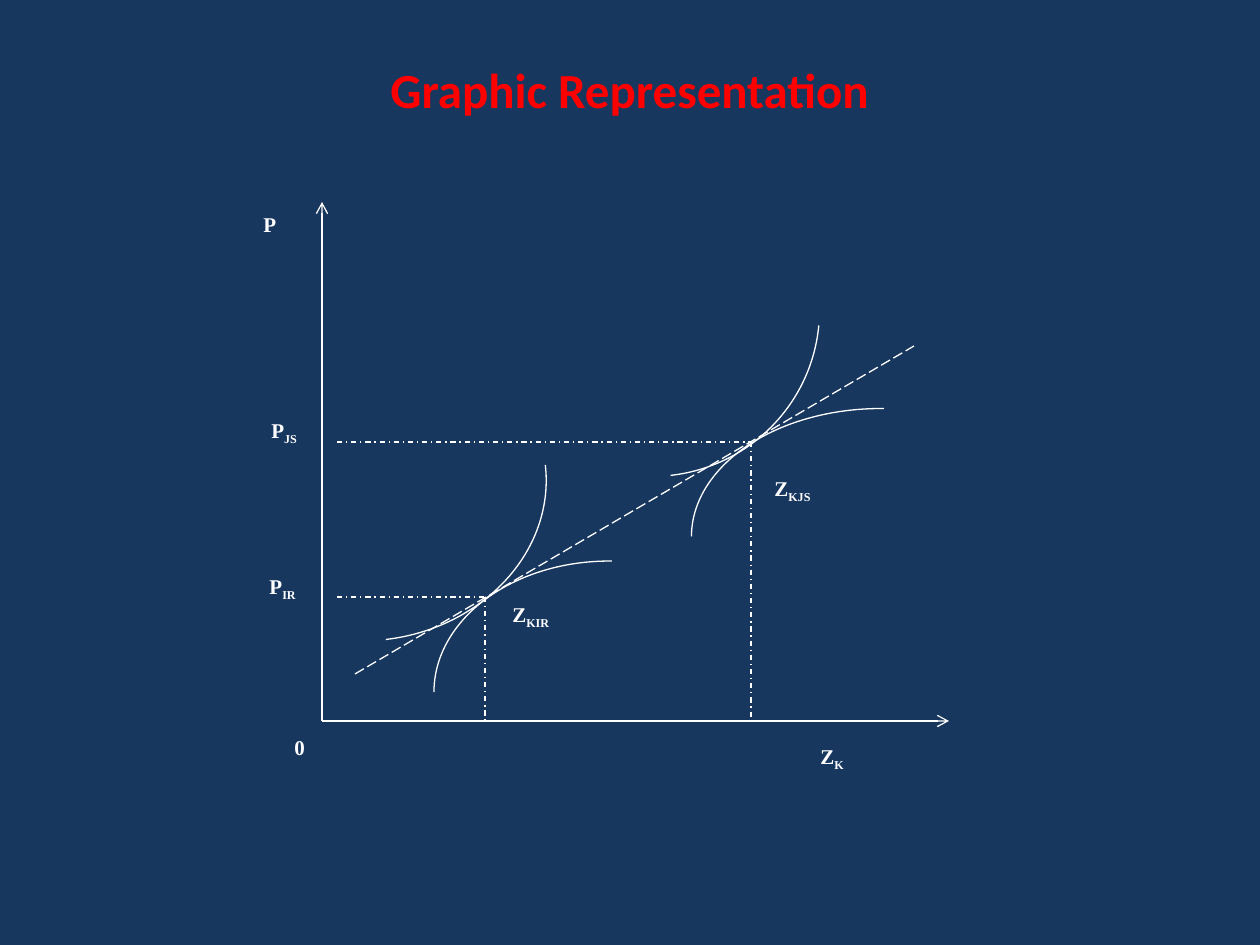
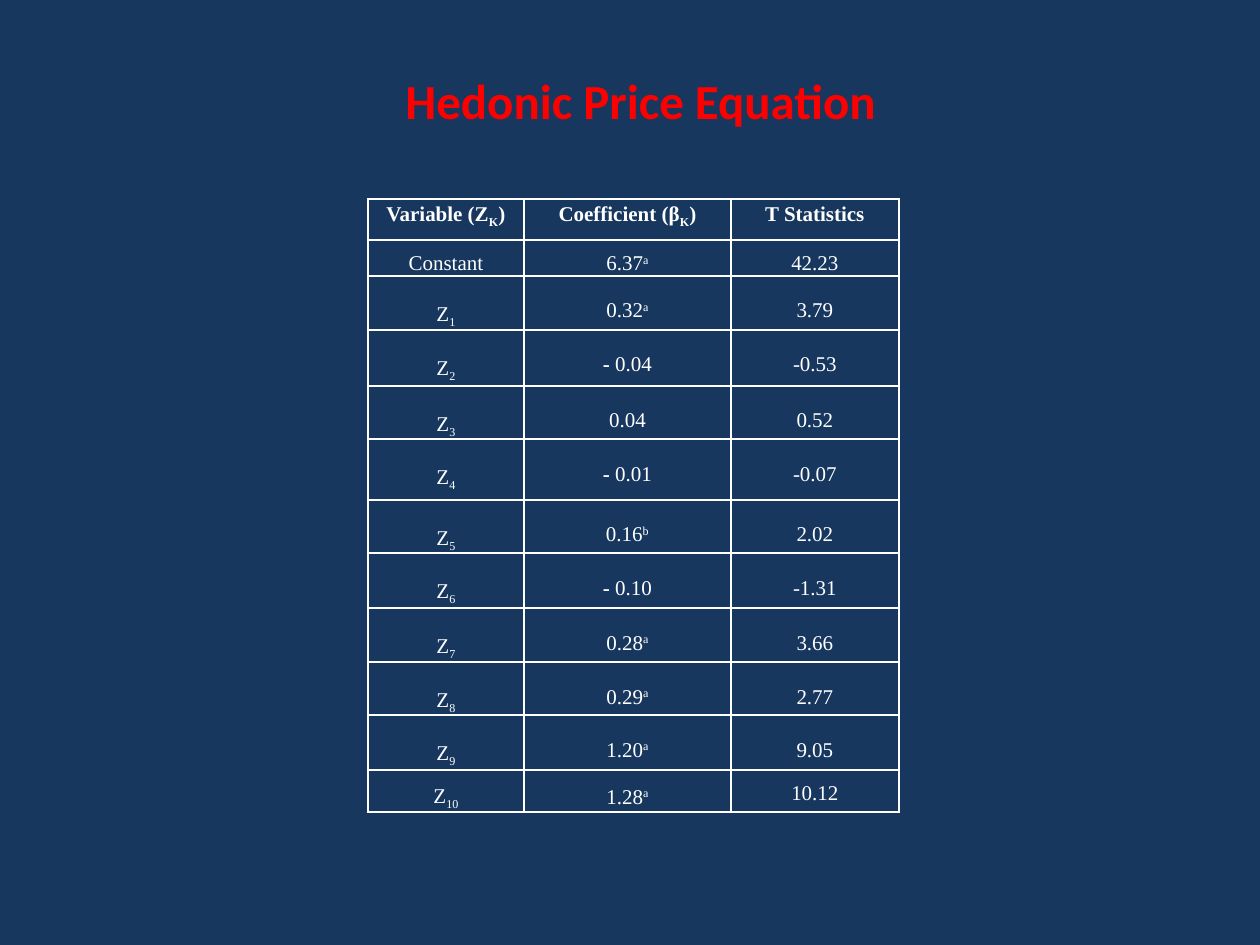
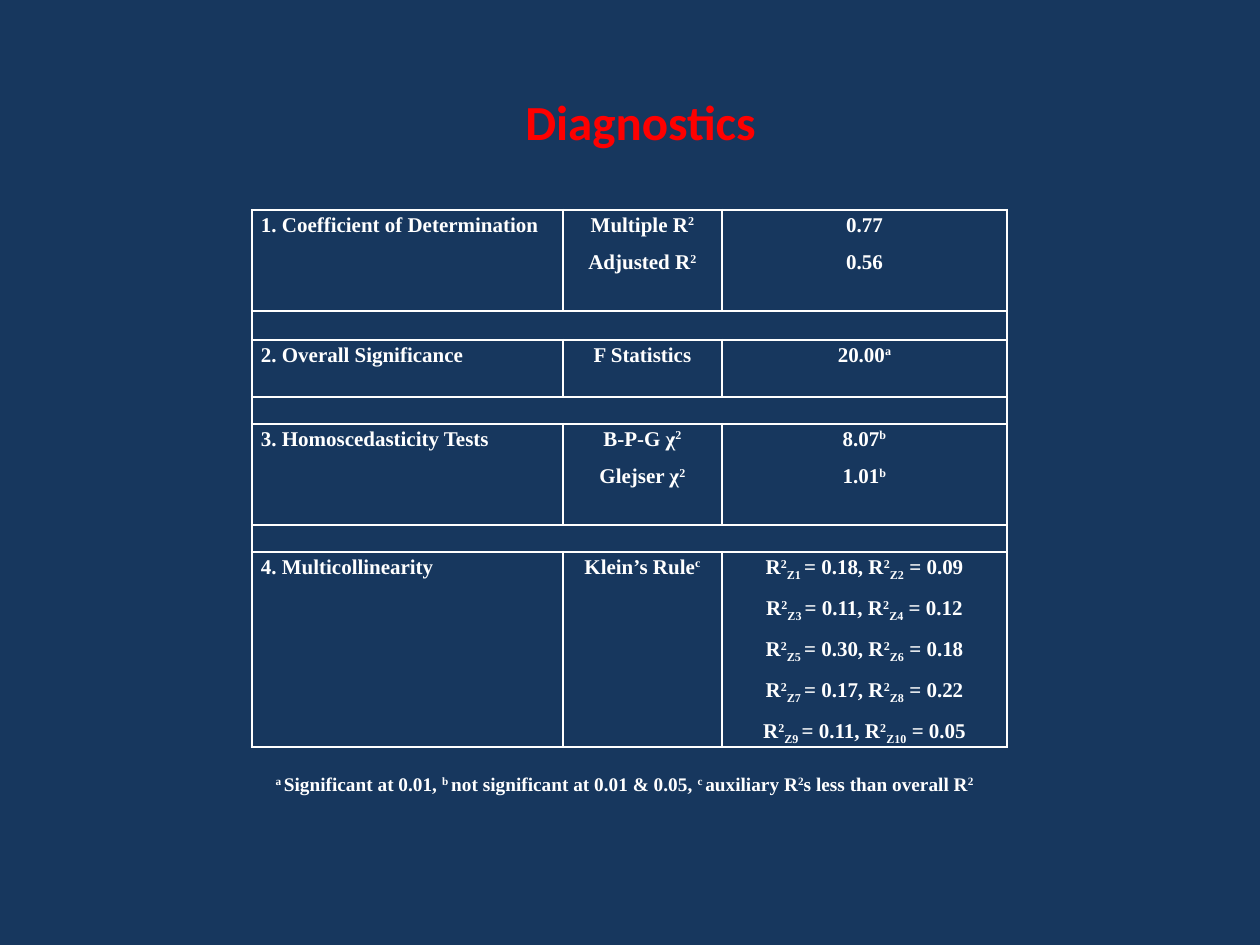
"""Builds three slides on hedonic prices: a graph, the price equation and its diagnostics."""
from lxml import etree
from pptx import Presentation, util as u
from pptx.dml.color import RGBColor
from pptx.enum import dml, shapes, text
from pptx.oxml import ns

NAVY = RGBColor(0x17, 0x37, 0x5E)
RED = RGBColor(0xFF, 0x00, 0x00)
WHITE = RGBColor(0xFF, 0xFF, 0xFF)
BODY_FONT = "Times New Roman"
BASELINES = {"^": "30000", "_": "-25000"}
LEFT, CENTER = text.PP_ALIGN.LEFT, text.PP_ALIGN.CENTER
MIDDLE = text.MSO_ANCHOR.MIDDLE
DASH_DOT, LONG_DASH = dml.MSO_LINE.DASH_DOT, dml.MSO_LINE.LONG_DASH


def px(count):
    """Turn pixels at 126 to the inch into EMU."""
    return u.Emu(round(count * 914400 / 126))


def add_tag(parent, tag, **attributes):
    """Append a DrawingML element to its parent."""
    return etree.SubElement(parent, ns.qn(tag), **attributes)


class Deck:
    """Holds the shared style and the current slide."""

    def __init__(self):
        """Start an empty navy presentation."""
        self.prs = Presentation()
        self.prs.slide_width, self.prs.slide_height = px(1260), px(945)
        backdrop = self.prs.slide_master.background.fill
        backdrop.solid()
        backdrop.fore_color.rgb = NAVY
        self.slide = None

    def add_slide(self, heading, left, top):
        """Open a new slide with its red heading."""
        self.slide = self.prs.slides.add_slide(self.prs.slide_layouts[5])
        title = self.slide.shapes.title
        title.left, title.top, title.width, title.height = map(px, (left, top, 1071, 158))
        title.text_frame.vertical_anchor = MIDDLE
        self.add_text(title.text_frame, heading, 28, CENTER, font="Calibri", color=RED)

    def add_text(self, frame, lines, size=12, align=LEFT, bold=True, font=BODY_FONT,
                 color=WHITE, spacing=None, before=None, after=None):
        """Fill a frame; "|" splits runs, which "^" raises, "_" lowers and "*" makes bold."""
        for index, line in enumerate(lines.split("\n")):
            paragraph = frame.add_paragraph() if index else frame.paragraphs[0]
            paragraph.alignment = align
            paragraph.line_spacing = spacing
            paragraph.space_before, paragraph.space_after = before, after
            for part in line.split("|"):
                mark = part[:1]
                run = paragraph.add_run()
                run.text = part.lstrip("^_*")
                run.font.size, run.font.name = u.Pt(size), font
                run.font.bold = bold or mark == "*"
                run.font.color.rgb = color
                if mark in BASELINES:
                    run.font._element.set("baseline", BASELINES[mark])

    def label(self, content, left, top, width, height):
        """Add a text box for a graph label."""
        frame = self.slide.shapes.add_textbox(*map(px, (left, top, width, height))).text_frame
        frame.word_wrap = True
        self.add_text(frame, content, spacing=1.15, after=u.Pt(10))

    def footnote(self, content, left, top, width, height):
        """Add a centred line of notes."""
        frame = self.slide.shapes.add_textbox(*map(px, (left, top, width, height))).text_frame
        frame.word_wrap = True
        frame.vertical_anchor = MIDDLE
        self.add_text(frame, content, 11, CENTER)

    def stroke(self, line):
        """Give a line the shared colour and width."""
        line.color.rgb = WHITE
        line.width = u.Pt(0.75)

    def line(self, start, end, dash=None, arrow=False):
        """Draw a straight line, dashed or with an arrowhead at will."""
        connector = self.slide.shapes.add_connector(
            shapes.MSO_CONNECTOR.STRAIGHT, *map(px, (*start, *end)))
        self.stroke(connector.line)
        if dash:
            connector.line.dash_style = dash
        if arrow:
            add_tag(connector.line._get_or_add_ln(), "a:tailEnd", type="arrow")
        add_tag(connector._element.spPr, "a:effectLst")

    def arc(self, left, top, width, height, rotation, end=0):
        """Draw a turned quarter arc."""
        curve = self.slide.shapes.add_shape(
            shapes.MSO_SHAPE.ARC, *map(px, (left, top, width, height)))
        curve.rotation = rotation
        curve.adjustments[1] = end
        curve.shadow.inherit = False
        curve.fill.background()
        self.stroke(curve.line)

    def table(self, left, top, widths, heights):
        """Add an unfilled table with white borders."""
        grid = self.slide.shapes.add_table(
            len(heights), len(widths),
            *map(px, (left, top, sum(widths), sum(heights)))).table
        grid.first_row = grid.horz_banding = False
        for column, width in zip(grid.columns, widths):
            column.width = px(width)
        for row, height in zip(grid.rows, heights):
            row.height = px(height)
        for cell in grid.iter_cells():
            cell.margin_left = cell.margin_right = px(9)
            cell.margin_top = cell.margin_bottom = 0
            for side in "LRTB":
                border = add_tag(cell._tc.get_or_add_tcPr(), f"a:ln{side}", w=str(u.Pt(1.5)))
                add_tag(add_tag(border, "a:solidFill"), "a:srgbClr", val=str(WHITE))
            cell.fill.background()
        return grid

    def fill_cell(self, cell, content, spacing, align=CENTER, bold=True):
        """Put text in one table cell."""
        self.add_text(cell.text_frame, content, align=align, bold=bold,
                      spacing=spacing, before=u.Pt(6))

    def blank_row(self, grid, index):
        """Merge a row into one low empty cell."""
        cell = grid.cell(index, 0)
        cell.merge(grid.cell(index, len(grid.columns) - 1))
        for spanned in grid.rows[index].cells:
            add_tag(spanned.text_frame.paragraphs[0]._p, "a:endParaRPr", sz="1200")


def build_graph(deck):
    """Show the tangent curves along the price line."""
    deck.add_slide("Graphic Representation", 94, 10)
    origin = (322, 721)
    deck.line(origin, (322, 202), arrow=True)
    deck.line(origin, (949, 721), arrow=True)
    for x, y in ((485, 597), (751, 442)):
        deck.line((x, y), (x, 721), DASH_DOT)
        deck.line((337, y), (x, y), DASH_DOT)
    deck.line((355, 674), (914, 346), LONG_DASH)
    for curve in ((478, 517, 262, 350, 270, 0.8), (753, 347, 256, 379, 270, 0.8),
                  (213, 307, 310, 357, 83.4), (485, 142, 333, 336, 95.3, 208.86)):
        deck.arc(*curve)
    for label in (("P", 251, 202, 49, 73), ("P|_JS", 259, 407, 98, 73),
                  ("P|_IR", 257, 563, 92, 73), ("0", 282, 725, 60, 76),
                  ("Z|_K", 808, 733, 93, 62), ("Z|_KIR", 500, 591, 127, 73),
                  ("Z|_KJS", 762, 465, 127, 73)):
        deck.label(*label)


def build_equation(deck):
    """Show the estimated coefficients."""
    deck.add_slide("Hedonic Price Equation", 105, 21)
    estimates = (("6.37|^a", "42.23"), ("0.32|^a", "3.79"), ("*-| 0.04", "-0.53"),
                 ("0.04", "0.52"), ("*-| 0.01", "-0.07"), ("0.16|^b", "2.02"),
                 ("*-| 0.10", "-1.31"), ("0.28|^a", "3.66"), ("0.29|^a", "2.77"),
                 ("1.20|^a", "9.05"), ("1.28|^a", "10.12"))
    rows = [("Variable (Z|_K|)", "Coefficient (β|_K|)", "T Statistics")]
    for number, estimate in enumerate(estimates):
        rows.append((f"Z|_{number}" if number else "Constant", *estimate))
    spacings = [1.15, 1.5] + [2.0] * 9 + [1.5]
    grid = deck.table(368, 199, (156, 207, 168),
                      (41, 36, 54, 56, 53, 61, 53, 55, 54, 53, 55, 42))
    for index, (row, spacing) in enumerate(zip(rows, spacings)):
        for cell, content in zip(grid.rows[index].cells, row):
            deck.fill_cell(cell, content, spacing, bold=index == 0)
    for column in range(2):
        last = grid.cell(len(rows) - 1, column)
        last.vertical_anchor = MIDDLE
        last.text_frame.paragraphs[0].space_before = 0


def build_diagnostics(deck):
    """Show the tests of the equation."""
    deck.add_slide("Diagnostics", 105, 42)
    auxiliary = ("0.18", "0.09", "0.11", "0.12", "0.30", "0.18", "0.17", "0.22", "0.11", "0.05")
    klein = "\n".join(
        f"R|^2|_Z{k + 1} |= {auxiliary[k]}, R|^2|_Z{k + 2}| = {auxiliary[k + 1]}"
        for k in range(0, len(auxiliary), 2))
    tests = (("1. Coefficient of Determination", "Multiple R|^2\nAdjusted R|^2", "0.77\n0.56"),
             ("2. Overall Significance", "F Statistics", "20.00|^a"),
             ("3. Homoscedasticity Tests", "B-P-G χ|^2\nGlejser χ|^2", "8.07|^b\n1.01|^b"),
             ("4. Multicollinearity", "Klein’s Rule|^c", klein))
    grid = deck.table(252, 210, (311, 159, 285), (101, 29, 57, 27, 101, 27, 195))
    for index, test in enumerate(tests):
        for cell, content, align in zip(grid.rows[2 * index].cells, test, (LEFT, CENTER, CENTER)):
            deck.fill_cell(cell, content, 1.15, align)
    for index in range(1, 7, 2):
        deck.blank_row(grid, index)
    deck.footnote("^a |Significant at 0.01, |^b |not significant at 0.01 & 0.05, "
                  "|^c |auxiliary R|^2|s less than overall R|^2", 136, 765, 977, 37)


def main():
    """Build and save the slides."""
    deck = Deck()
    build_graph(deck)
    build_equation(deck)
    build_diagnostics(deck)
    deck.prs.save("out.pptx")


if __name__ == "__main__":
    main()
